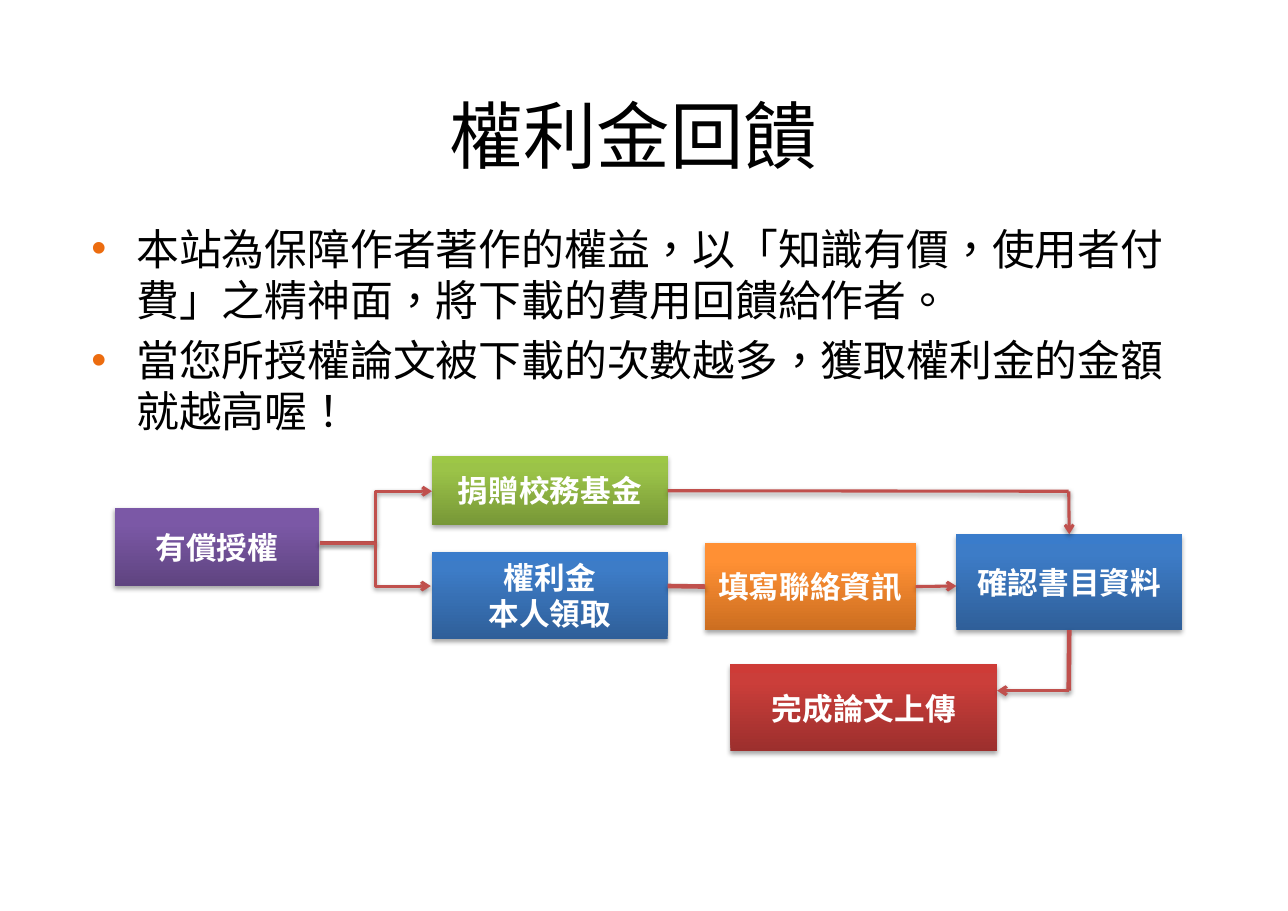
from copy import deepcopy

from lxml import etree
from pptx import Presentation
from pptx import util as u
from pptx.dml.color import RGBColor
from pptx.enum import lang, shapes, text
from pptx.oxml import ns

PX = 9144  # EMU in one px, 100 px to the inch
LINE = "C0504D"
PURPLE = ("5F4480", "7B58A6", "7C57A8")
GREEN = ("779737", "9BC348", "9DC746")
BLUE = ("2F5F99", "3D7CC7", "3A7CCB")
ORANGE = ("CC6E20", "FF9034", "FF9136")
RED = ("9C2F2D", "CB3E3A", "CE3B37")


def px(*values):
    return [u.Emu(v * PX) for v in values]


def rgb(value):
    return RGBColor.from_string(value)


def sub(parent, tag, **attrs):
    return etree.SubElement(parent, ns.qn(tag), attrs)


def write(tf, lines, size, font, color="000000", bold=False, ea="Noto Sans CJK SC",
          align=text.PP_ALIGN.CENTER, anchor=text.MSO_ANCHOR.MIDDLE,
          spacing=None, before=0, bullet=None):
    tf.word_wrap = True
    tf.auto_size = text.MSO_AUTO_SIZE.NONE
    tf.vertical_anchor = anchor
    for i, line in enumerate(lines):
        p = tf.add_paragraph() if i else tf.paragraphs[0]
        p.alignment = align
        p.space_before = u.Pt(before if i else 0)
        if spacing:
            p.line_spacing = u.Pt(spacing)
        if bullet:
            pPr = p._p.get_or_add_pPr()
            indent = 41 * PX
            pPr.set("marL", str(indent))
            pPr.set("indent", str(-indent))
            sub(sub(pPr, "a:buClr"), "a:srgbClr", val=bullet)
            sub(pPr, "a:buFont", typeface="Arial")
            sub(pPr, "a:buChar", char="•")
        r = p.add_run()
        r.text = line
        r.font.size, r.font.name, r.font.bold = u.Pt(size), font, bold
        r.font.color.rgb = rgb(color)
        r.font.language_id = lang.MSO_LANGUAGE_ID.TRADITIONAL_CHINESE
        sub(r._r.get_or_add_rPr(), "a:ea", typeface=ea)


def cast_shadow(effects, dist, alpha):
    shadow = sub(effects, "a:outerShdw", blurRad="40000", dist=str(dist),
                 dir="5400000", rotWithShape="0")
    sub(sub(shadow, "a:srgbClr", val="000000"), "a:alpha", val=str(alpha * 1000))


class Flow:
    def __init__(self, slide):
        self.slide = slide

    def title(self, words, *box):
        sp = self.slide.shapes.title
        sp.left, sp.top, sp.width, sp.height = px(*box)
        write(sp.text_frame, [words], 48, "Times New Roman")

    def bullets(self, lines, *box):
        sp = self.slide.shapes.add_textbox(*px(*box))
        write(sp.text_frame, lines, 28, "Noto Sans CJK SC", spacing=33.6, before=5.6,
              align=text.PP_ALIGN.LEFT, anchor=text.MSO_ANCHOR.TOP, bullet="EC6C0F")

    def step(self, lines, colors, *box):
        sp = self.slide.shapes.add_shape(shapes.MSO_SHAPE.RECTANGLE, *px(*box))
        sp.fill.gradient()
        sp.fill.gradient_angle = 90
        stops = sp._element.spPr.find(".//" + ns.qn("a:gsLst"))
        stops.append(deepcopy(stops[-1]))
        for stop, color, place in zip(sp.fill.gradient_stops, colors, (0, 0.8, 1)):
            stop.color.rgb = rgb(color)
            stop.position = place
        sp.line.fill.background()
        sp.shadow.inherit = False
        cast_shadow(sp._element.spPr.find(ns.qn("a:effectLst")), 23000, 35)
        write(sp.text_frame, lines, 20, "Calibri", color="FFFFFF", bold=True,
              spacing=23.5 if len(lines) > 1 else None)
        return sp

    def link(self, start, end, bent=False, arrow=False, width=2, begin=None, finish=None):
        kind = shapes.MSO_CONNECTOR.ELBOW if bent else shapes.MSO_CONNECTOR.STRAIGHT
        sp = self.slide.shapes.add_connector(kind, *px(*start, *end))
        if begin:
            sp.begin_connect(*begin)
        if finish:
            sp.end_connect(*finish)
        sp.line.color.rgb = rgb(LINE)
        sp.line.width = u.Pt(width)
        if arrow:
            sub(sp.line._get_or_add_ln(), "a:tailEnd", type="arrow")
        dist, alpha = (20000, 38) if width == 2 else (23000, 35)
        cast_shadow(sub(sp._element.spPr, "a:effectLst"), dist, alpha)


def main():
    prs = Presentation()
    prs.slide_width, prs.slide_height = px(1169, 827)
    flow = Flow(prs.slides.add_slide(prs.slide_layouts[5]))

    # Title and introduction
    flow.title("權利金回饋", 125, 59, 900, 125)
    flow.bullets(["本站為保障作者著作的權益，以「知識有價，使用者付費」之精神面，將下載的費用回饋給作者。",
                  "當您所授權論文被下載的次數越多，獲取權利金的金額就越高喔！"],
                 73, 197, 1008, 533)

    # Steps
    flow.step(["有償授權"], PURPLE, 104, 461, 186, 71)
    donate = flow.step(["捐贈校務基金"], GREEN, 392, 414, 214, 63)
    flow.step(["權利金", "本人領取"], BLUE, 392, 501, 214, 79)
    contact = flow.step(["填寫聯絡資訊"], ORANGE, 640, 493, 191, 79)
    confirm = flow.step(["確認書目資料"], BLUE, 868, 485, 205, 87)
    flow.step(["完成論文上傳"], RED, 663, 603, 242, 79)

    # Links from the paid licence to its two branches
    flow.link((290, 493), (392, 446), bent=True, arrow=True)
    flow.link((290, 493), (391, 532), bent=True, arrow=True)

    # Donation branch
    flow.link((606, 446), (970, 446), begin=(donate, 3))
    flow.link((970, 446), (970, 485), arrow=True, finish=(confirm, 0))

    # Royalty branch
    flow.link((640, 532), (606, 532), width=3, begin=(contact, 1))
    flow.link((831, 532), (868, 532), arrow=True, begin=(contact, 3))

    # From confirmation to upload
    flow.link((970, 627), (970, 572), width=3, finish=(confirm, 2))
    flow.link((970, 627), (905, 627), arrow=True)

    prs.save("out.pptx")


if __name__ == "__main__":
    main()
